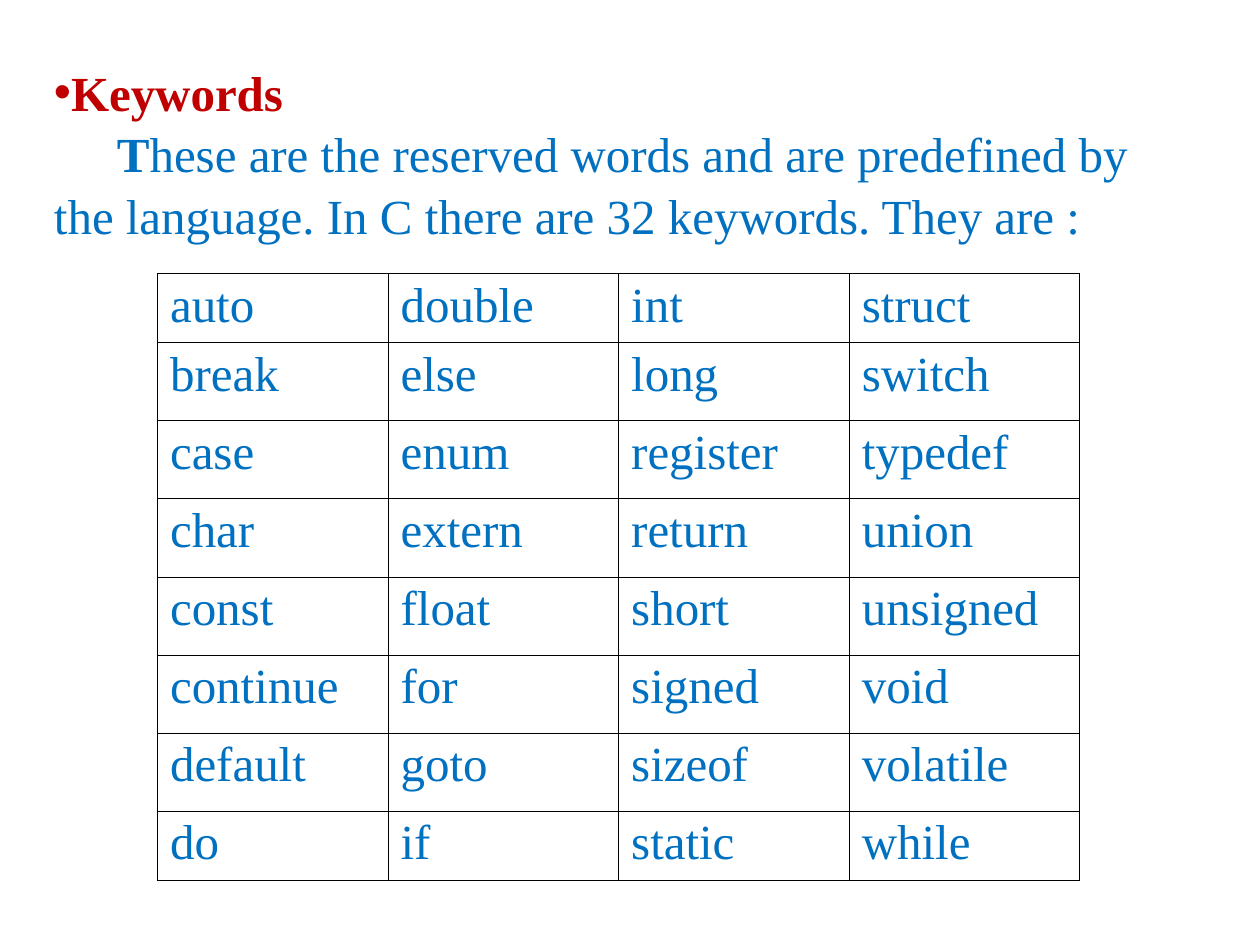
from dataclasses import dataclass

from lxml.etree import SubElement
from pptx import Presentation
from pptx.dml.color import RGBColor
from pptx.oxml.ns import qn
from pptx.util import Inches, Pt

FONT, SIZE = "Times New Roman", 28
RED, BLUE, BLACK, WHITE = "C00000", "0070C0", "000000", "FFFFFF"
COLUMN_WIDTH = 1.83
ROW_HEIGHTS = [0.55] + [0.62] * 6 + [0.55]
KEYWORDS = """
auto double int struct
break else long switch
case enum register typedef
char extern return union
const float short unsigned
continue for signed void
default goto sizeof volatile
do if static while
"""


@dataclass(frozen=True)
class Span:
    text: str
    color: str = BLUE
    bold: bool = False


INTRO = [
    [Span("Keywords", RED, True)],
    [
        Span("\tT", bold=True),
        Span(
            "hese are the reserved words and are predefined by the language. "
            "In C there are 32 keywords. They are :"
        ),
    ],
]


def rgb(color: str) -> RGBColor:
    """Turn a hex string into a colour."""
    return RGBColor.from_string(color)


def add_span(paragraph, span: Span) -> None:
    """Append one formatted run to a paragraph."""
    run = paragraph.add_run()
    run.text = span.text
    run.font.name, run.font.size, run.font.bold = FONT, Pt(SIZE), span.bold
    run.font.color.rgb = rgb(span.color)


def add_bullet(paragraph) -> None:
    """Put a round bullet before a paragraph."""
    properties = paragraph._p.get_or_add_pPr()
    SubElement(properties, qn("a:buFont"), typeface="Arial")
    SubElement(properties, qn("a:buChar"), char="•")


def add_borders(cell, width: float) -> None:
    """Draw a black line on the four sides of a cell."""
    properties = cell._tc.get_or_add_tcPr()
    for index, side in enumerate(("lnL", "lnR", "lnT", "lnB")):
        line = properties.makeelement(qn(f"a:{side}"), {"w": str(Pt(width))})
        fill = SubElement(line, qn("a:solidFill"))
        SubElement(fill, qn("a:srgbClr"), val=BLACK)
        properties.insert(index, line)


def add_intro(slide) -> None:
    """Write the heading and the sentence under it."""
    box = slide.shapes.add_textbox(*map(Inches, (0.33, 0.42, 9.25, 6.83)))
    text_frame = box.text_frame
    text_frame.word_wrap = True
    for index, spans in enumerate(INTRO):
        paragraph = text_frame.add_paragraph() if index else text_frame.paragraphs[0]
        paragraph.line_spacing = 1.05
        for span in spans:
            add_span(paragraph, span)
    add_bullet(text_frame.paragraphs[0])


def add_keyword_table(slide, rows: list[list[str]]) -> None:
    """Lay out the keywords in a ruled table."""
    columns = len(rows[0])
    size = (columns * COLUMN_WIDTH, sum(ROW_HEIGHTS))
    table = slide.shapes.add_table(
        len(rows), columns, *map(Inches, (1.25, 2.17, *size))
    ).table
    table.first_row = table.horz_banding = False
    for column in table.columns:
        column.width = Inches(COLUMN_WIDTH)
    for row, height, words in zip(table.rows, ROW_HEIGHTS, rows):
        row.height = Inches(height)
        for cell, word in zip(row.cells, words):
            cell.margin_top = cell.margin_bottom = Inches(0.04)
            cell.fill.solid()
            cell.fill.fore_color.rgb = rgb(WHITE)
            add_borders(cell, 0.5)
            add_span(cell.text_frame.paragraphs[0], Span(word))


def main() -> None:
    """Build and save the slide."""
    presentation = Presentation()
    presentation.slide_width, presentation.slide_height = Inches(10), Inches(7.5)
    slide = presentation.slides.add_slide(presentation.slide_layouts[6])
    add_intro(slide)
    add_keyword_table(slide, [line.split() for line in KEYWORDS.strip().splitlines()])
    presentation.save("out.pptx")


if __name__ == "__main__":
    main()
